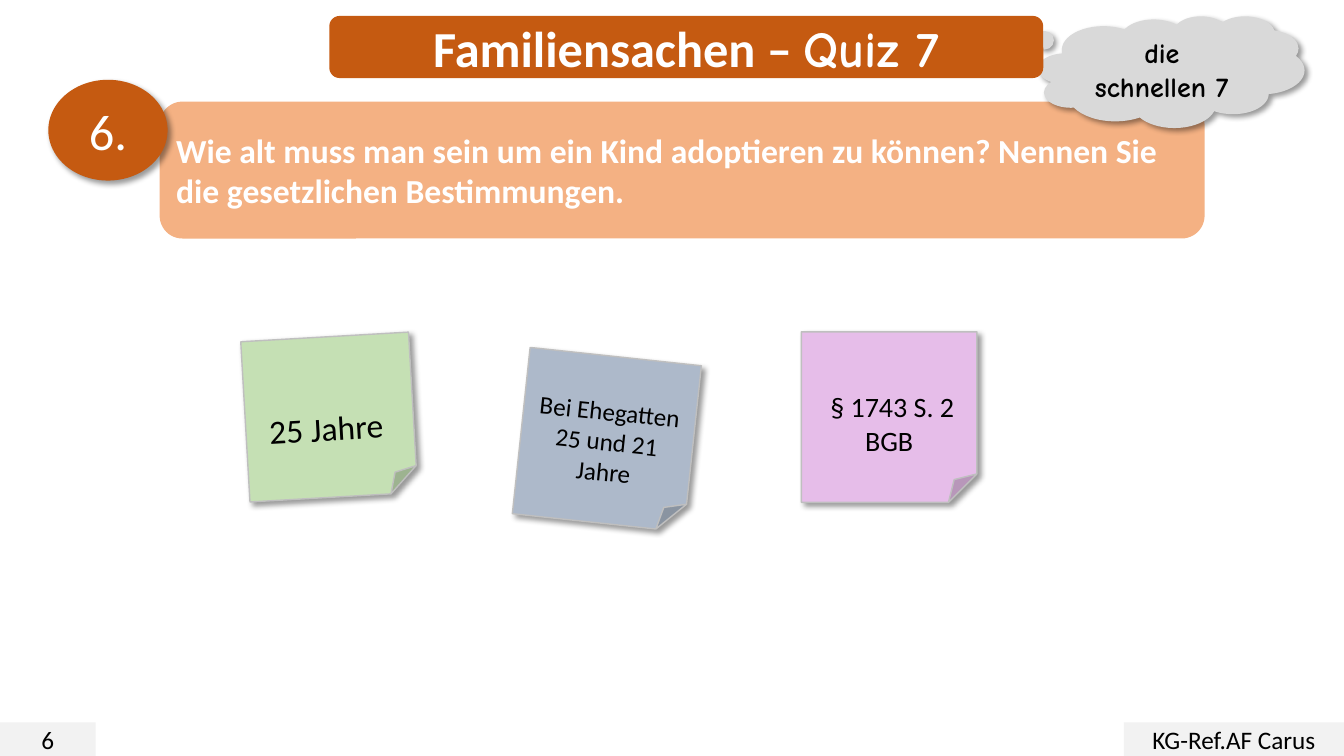
from dataclasses import dataclass

from lxml.etree import SubElement
from pptx import Presentation
from pptx.dml.color import RGBColor
from pptx.enum.shapes import MSO_SHAPE
from pptx.enum.text import MSO_ANCHOR, PP_ALIGN
from pptx.oxml.ns import qn
from pptx.shapes.autoshape import Shape
from pptx.slide import Slide
from pptx.util import Inches, Pt

WHITE = RGBColor(0xFF, 0xFF, 0xFF)
BLACK = RGBColor(0x00, 0x00, 0x00)
PALE_GREY = RGBColor(0xF2, 0xF2, 0xF2)
CLOUD_GREY = RGBColor(0xD9, 0xD9, 0xD9)
EDGE_GREY = RGBColor(0xBF, 0xBF, 0xBF)
ORANGE = RGBColor(0xC5, 0x5A, 0x11)
PEACH = RGBColor(0xF4, 0xB1, 0x83)
GREEN = RGBColor(0xC5, 0xE0, 0xB4)
PINK = RGBColor(0xE6, 0xBD, 0xE9)
BLUE = RGBColor(0xAD, 0xB9, 0xCA)

BODY_FONT = "Calibri"
COMIC_FONT = "Comic Neue"
WIDTH, HEIGHT = Inches(13.33), Inches(7.5)
COLUMN, ROW = WIDTH / 160, HEIGHT / 90
LINE_HEIGHT = 1.22
INSET = 3.6


@dataclass(frozen=True)
class Box:
    kind: MSO_SHAPE
    col: float
    row: float
    cols: float
    rows: float
    fill: RGBColor
    lines: tuple[str, ...]
    size: float
    color: RGBColor = BLACK
    font: str = BODY_FONT
    bold: bool = False
    align: PP_ALIGN = PP_ALIGN.CENTER
    shadow: bool = False


@dataclass(frozen=True)
class Note:
    col: float
    row: float
    cols: float
    rows: float
    fill: RGBColor
    lines: tuple[str, ...]
    size: float
    lead: float
    rotation: float = 0


FOOTERS = (
    Box(MSO_SHAPE.RECTANGLE, 0, 86, 11.4, 4, PALE_GREY, ("6",), 18),
    Box(MSO_SHAPE.RECTANGLE, 133.8, 86, 26.2, 4, PALE_GREY, ("KG-Ref.AF Carus",), 18),
)
QUESTION = Box(
    MSO_SHAPE.ROUNDED_RECTANGLE, 19, 12.1, 124.4, 16.3, PEACH,
    ("Wie alt muss man sein um ein Kind adoptieren zu können? "
     "Nennen Sie die gesetzlichen Bestimmungen.",),
    24, WHITE, bold=True, align=PP_ALIGN.LEFT,
)
NUMBER = Box(MSO_SHAPE.OVAL, 5.75, 9.5, 14.2, 12, ORANGE, ("6.",), 36, WHITE, shadow=True)
CLOUD = Box(
    MSO_SHAPE.CLOUD_CALLOUT, 123.6, 1.9, 31.7, 13.3, CLOUD_GREY,
    ("die schnellen 7",), 20, font=COMIC_FONT, bold=True, shadow=True,
)
TITLE = Box(
    MSO_SHAPE.ROUNDED_RECTANGLE, 39.2, 1.9, 85, 7.4, ORANGE,
    ("Familiensachen – ",), 36, WHITE, bold=True,
)
NOTES = (
    Note(29.2, 40.1, 20, 19.1, GREEN, ("25 Jahre ",), 24, 28, 356.7),
    Note(95.4, 39.5, 20.9, 20.3, PINK, (" § 1743 S. 2 BGB",), 20, 24),
    Note(62, 42.4, 20.5, 19.9, BLUE, ("Bei Ehegatten 25 und 21", "Jahre"), 18, 18, 6.1),
)


def add_shadow(sp: Shape) -> None:
    effects = sp.element.spPr.find(qn("a:effectLst"))
    outer = SubElement(
        effects, qn("a:outerShdw"), blurRad=str(Pt(4)), dist=str(Pt(3)),
        dir=str(45 * 60000), algn="tl", rotWithShape="0",
    )
    color = SubElement(outer, qn("a:srgbClr"), val=str(BLACK))
    SubElement(color, qn("a:alpha"), val="40000")


def add_box(slide: Slide, box: Box) -> Shape:
    sp = slide.shapes.add_shape(
        box.kind, round(box.col * COLUMN), round(box.row * ROW),
        round(box.cols * COLUMN), round(box.rows * ROW),
    )
    sp.fill.solid()
    sp.fill.fore_color.rgb = box.fill
    sp.line.fill.background()
    sp.shadow.inherit = False
    if box.shadow:
        add_shadow(sp)
    tf = sp.text_frame
    tf.word_wrap = True
    tf.vertical_anchor = MSO_ANCHOR.MIDDLE
    tf.text = "\n".join(box.lines)
    for p in tf.paragraphs:
        p.alignment = box.align
        p.font.name = box.font
        p.font.size = Pt(box.size)
        p.font.bold = box.bold
        p.font.color.rgb = box.color
    return sp


def add_note(slide: Slide, note: Note) -> None:
    sp = add_box(slide, Box(
        MSO_SHAPE.FOLDED_CORNER, note.col, note.row, note.cols, note.rows,
        note.fill, note.lines, note.size, shadow=True,
    ))
    sp.line.color.rgb = EDGE_GREY
    sp.line.width = Pt(1)
    sp.rotation = note.rotation
    sp.text_frame.margin_top = Pt(INSET + LINE_HEIGHT * note.lead)


def add_cloud(slide: Slide) -> None:
    sp = add_box(slide, CLOUD)
    sp.adjustments[0] = -0.59
    sp.adjustments[1] = -0.35


def add_title(slide: Slide) -> None:
    p = add_box(slide, TITLE).text_frame.paragraphs[0]
    r = p.add_run()
    r.text = "Quiz 7"
    r.font.name = COMIC_FONT


def main() -> None:
    prs = Presentation()
    prs.slide_width, prs.slide_height = WIDTH, HEIGHT
    slide = prs.slides.add_slide(prs.slide_layouts[6])
    for box in (*FOOTERS, QUESTION, NUMBER):
        add_box(slide, box)
    for note in NOTES:
        add_note(slide, note)
    add_cloud(slide)
    add_title(slide)
    prs.save("out.pptx")


if __name__ == "__main__":
    main()
